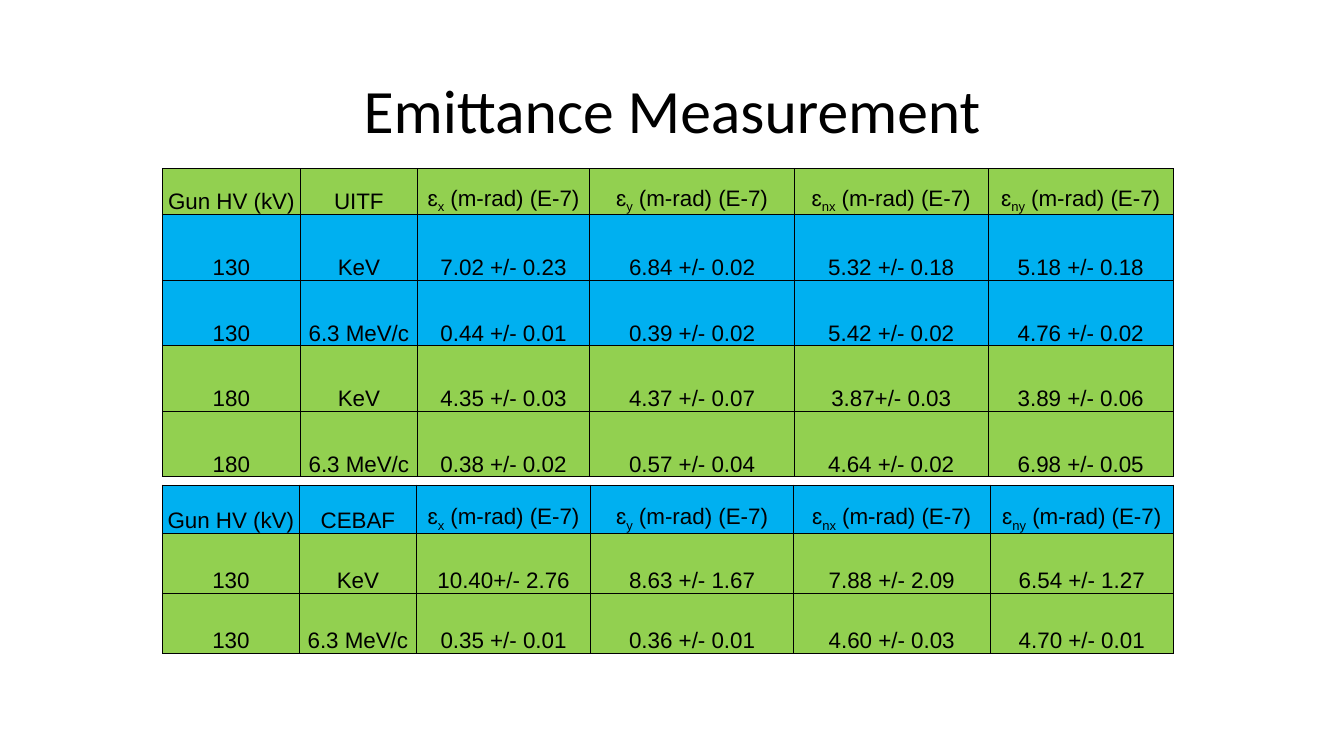
"""Build the emittance measurement slide with its two result tables."""
from dataclasses import dataclass

from lxml.etree import SubElement
from pptx import Presentation
from pptx.dml.color import RGBColor
from pptx.enum.text import MSO_VERTICAL_ANCHOR as Anchor, PP_PARAGRAPH_ALIGNMENT as Align
from pptx.oxml.ns import qn
from pptx.slide import Slide
from pptx.table import _Cell as Cell
from pptx.text.text import TextFrame
from pptx.util import Inches, Pt

GREEN, BLUE, BLACK = "92D050", "00B0F0", "000000"
EMITTANCES = [f"ɛ_{axis}_ (m-rad) (E-7)" for axis in ("x", "y", "nx", "ny")]


@dataclass(frozen=True)
class Results:
    facility: str
    top: float
    widths: list[float]
    heights: list[float]
    fills: list[str]
    measurements: list[list[str]]


RESULTS = [
    Results(
        "UITF", 1.67,
        [1.37, 1.16, 1.71, 2.03, 1.92, 1.84],
        [0.46] + [0.65] * 4,
        [GREEN, BLUE, BLUE, GREEN, GREEN],
        [
            ["130", "KeV", "7.02 +/- 0.23", "6.84 +/- 0.02", "5.32 +/- 0.18", "5.18 +/- 0.18"],
            ["130", "6.3 MeV/c", "0.44 +/- 0.01", "0.39 +/- 0.02", "5.42 +/- 0.02", "4.76 +/- 0.02"],
            ["180", "KeV", "4.35 +/- 0.03", "4.37 +/- 0.07", "3.87+/- 0.03", "3.89 +/- 0.06"],
            ["180", "6.3 MeV/c", "0.38 +/- 0.02", "0.57 +/- 0.04", "4.64 +/- 0.02", "6.98 +/- 0.05"],
        ],
    ),
    Results(
        "CEBAF", 4.81,
        [1.36, 1.16, 1.73, 2.01, 1.95, 1.82],
        [0.48, 0.6, 0.59],
        [BLUE, GREEN, GREEN],
        [
            ["130", "KeV", "10.40+/- 2.76", "8.63 +/- 1.67", "7.88 +/- 2.09", "6.54 +/- 1.27"],
            ["130", "6.3 MeV/c", "0.35 +/- 0.01", "0.36 +/- 0.01", "4.60 +/- 0.03", "4.70 +/- 0.01"],
        ],
    ),
]


def rgb(code: str) -> RGBColor:
    """Turn a hex string into a colour."""
    return RGBColor.from_string(code)


def write(frame: TextFrame, text: str, *, size: float = 16, font: str = "Arial",
          color: str = BLACK, spacing: float = 1.0) -> None:
    """Write one centred line, lowering the parts between underscores."""
    line = frame.paragraphs[0]
    line.alignment = Align.CENTER
    line.line_spacing = spacing
    for index, part in enumerate(text.split("_")):
        run = line.add_run()
        run.text = part
        run.font.size = Pt(size)
        run.font.name = font
        run.font.color.rgb = rgb(color)
        if index % 2:
            run.font._element.set("baseline", "-25000")


def add_borders(cell: Cell, color: str = BLACK, width: float = 0.5) -> None:
    """Draw a thin line on each side of a cell."""
    properties = cell._tc.get_or_add_tcPr()
    for side in ("lnL", "lnR", "lnT", "lnB"):
        border = SubElement(properties, qn(f"a:{side}"), w=str(Pt(width)))
        fill = SubElement(border, qn("a:solidFill"))
        SubElement(fill, qn("a:srgbClr"), val=color)


def fill_cell(cell: Cell, text: str, fill: str) -> None:
    """Format one cell and write its text."""
    cell.margin_left = cell.margin_right = cell.margin_top = Inches(0.01)
    cell.margin_bottom = 0
    cell.vertical_anchor = Anchor.BOTTOM
    add_borders(cell)
    cell.fill.solid()
    cell.fill.fore_color.rgb = rgb(fill)
    write(cell.text_frame, text)


def add_results(slide: Slide, results: Results) -> None:
    """Add the table of one facility."""
    rows = [["Gun HV (kV)", results.facility, *EMITTANCES], *results.measurements]
    table = slide.shapes.add_table(
        len(rows), len(results.widths), Inches(1.61), Inches(results.top),
        Inches(sum(results.widths)), Inches(sum(results.heights))).table
    table.first_row = table.horz_banding = False
    for column, width in zip(table.columns, results.widths):
        column.width = Inches(width)
    for row, height, fill, texts in zip(table.rows, results.heights, results.fills, rows):
        row.height = Inches(height)
        for cell, text in zip(row.cells, texts):
            fill_cell(cell, text, fill)


def main() -> None:
    """Build and save the slide."""
    deck = Presentation()
    deck.slide_width, deck.slide_height = Inches(13.33), Inches(7.5)
    slide = deck.slides.add_slide(deck.slide_layouts[6])
    title = slide.shapes.add_textbox(
        Inches(0.92), Inches(0.4), Inches(11.5), Inches(1.45)).text_frame
    title.word_wrap = True
    title.vertical_anchor = Anchor.MIDDLE
    write(title, "Emittance Measurement", size=44, font="Calibri", spacing=0.9)
    for results in RESULTS:
        add_results(slide, results)
    deck.save("out.pptx")


if __name__ == "__main__":
    main()
